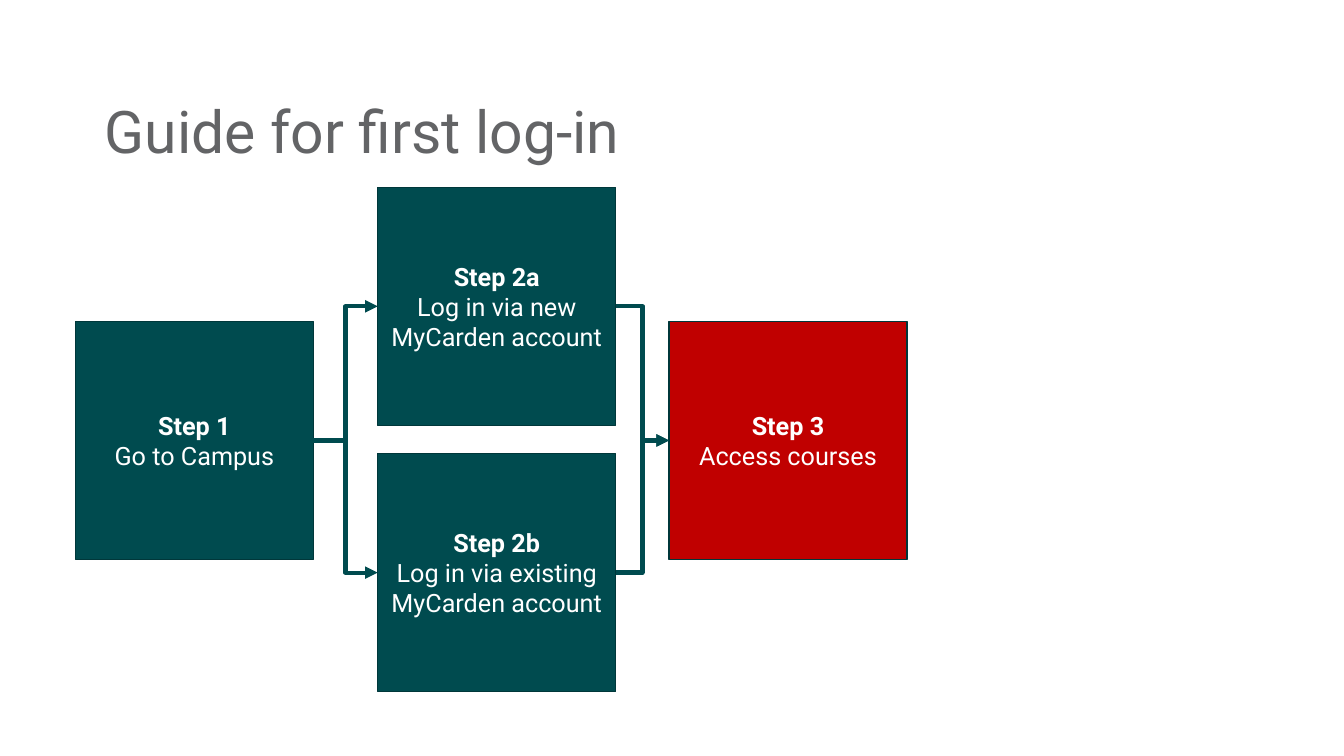
from lxml import etree
from pptx import Presentation
from pptx.dml.color import RGBColor
from pptx.enum.shapes import MSO_CONNECTOR, MSO_SHAPE
from pptx.enum.text import MSO_ANCHOR, MSO_AUTO_SIZE, PP_ALIGN
from pptx.oxml.ns import qn
from pptx.util import Cm, Pt

ELBOW = MSO_CONNECTOR.ELBOW
RECT = MSO_SHAPE.RECTANGLE
MIDDLE = MSO_ANCHOR.MIDDLE
FIXED = MSO_AUTO_SIZE.NONE
LEFT, CENTER = PP_ALIGN.LEFT, PP_ALIGN.CENTER

FONT = "Roboto"
SIDE = 6
LEFT_SITE, RIGHT_SITE = 1, 3
COLORS = {
    "title": "636466",
    "teal": "004B4F",
    "edge": "00373A",
    "red": "C00000",
    "white": "FFFFFF",
}
# name: (left, top, fill, text)
STEPS = {
    "Step 1": (1.9, 8.1, "teal", "Go to Campus"),
    "Step 2a": (9.52, 4.72, "teal", "Log in via new MyCarden account"),
    "Step 3": (16.86, 8.1, "red", "Access courses"),
    "Step 2b": (9.52, 11.43, "teal", "Log in via existing MyCarden account"),
}
LINKS = [
    ("Step 1", "Step 2a"),
    ("Step 1", "Step 2b"),
    ("Step 2b", "Step 3"),
    ("Step 2a", "Step 3"),
]


def color(name):
    return RGBColor.from_string(COLORS[name])


def add_run(para, text, size, tint, bold=False):
    run = para.add_run()
    run.text = text
    run.font.name = FONT
    run.font.size = Pt(size)
    run.font.bold = bold
    run.font.color.rgb = color(tint)


def set_title(slide, text):
    title = slide.shapes.title
    title.left, title.top = Cm(2.64), Cm(2.51)
    title.width, title.height = Cm(24.54), Cm(1.78)
    frame = title.text_frame
    frame.word_wrap = True
    frame.auto_size = FIXED
    frame.vertical_anchor = MIDDLE
    frame.margin_left = 0
    para = frame.paragraphs[0]
    para.alignment = LEFT
    para.line_spacing = 0.9
    add_run(para, text, 42, "title")


def add_step(slide, name, left, top, fill, text):
    box = slide.shapes.add_shape(RECT, Cm(left), Cm(top), Cm(SIDE), Cm(SIDE))
    box.shadow.inherit = False
    box.fill.solid()
    box.fill.fore_color.rgb = color(fill)
    box.line.color.rgb = color("edge")
    box.line.width = Pt(1)
    frame = box.text_frame
    frame.word_wrap = True
    frame.vertical_anchor = MIDDLE
    head, body = frame.paragraphs[0], frame.add_paragraph()
    head.alignment = body.alignment = CENTER
    add_run(head, name, 18, "white", bold=True)
    add_run(body, text, 18, "white")
    return box


def add_link(slide, start, end):
    """Join the right side of one box to the left side of another."""
    link = slide.shapes.add_connector(
        ELBOW,
        start.left + start.width, start.top + start.height // 2,
        end.left, end.top + end.height // 2,
    )
    link.begin_connect(start, RIGHT_SITE)
    link.end_connect(end, LEFT_SITE)
    link.line.color.rgb = color("teal")
    link.line.width = Pt(3)
    etree.SubElement(link.line._get_or_add_ln(), qn("a:tailEnd"), type="triangle")
    etree.SubElement(link._element.spPr, qn("a:effectLst"))


def main():
    deck = Presentation()
    deck.slide_width, deck.slide_height = Cm(33.87), Cm(19.05)
    slide = deck.slides.add_slide(deck.slide_layouts[5])
    set_title(slide, "Guide for first log-in")
    boxes = {name: add_step(slide, name, *step) for name, step in STEPS.items()}
    for start, end in LINKS:
        add_link(slide, boxes[start], boxes[end])
    deck.save("out.pptx")


if __name__ == "__main__":
    main()
